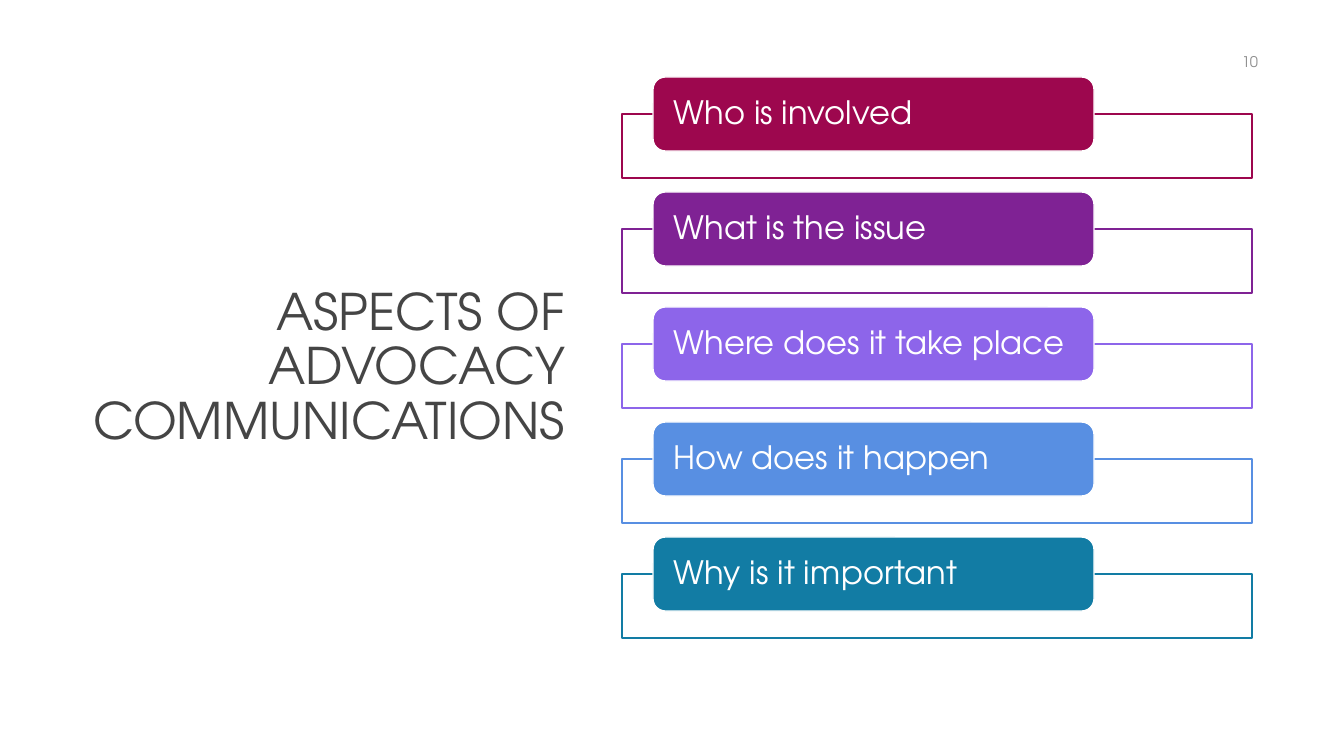
from pptx import Presentation
from pptx.dml.color import RGBColor
from pptx.enum.shapes import MSO_SHAPE
from pptx.enum.text import MSO_ANCHOR, PP_ALIGN
from pptx.util import Pt

PX = 914400 / 100.8
FONT = "TeX Gyre Adventor"
ROW_PITCH = 115
ASPECTS = [
    ("Who is involved", "9D074E"),
    ("What is the issue", "7F2294"),
    ("Where does it take place", "8D65EA"),
    ("How does it happen", "588FE2"),
    ("Why is it important", "127CA4"),
]


def px(*lengths):
    """Turn pixel lengths into a list of EMU."""
    return [round(length * PX) for length in lengths]


def write(shape, text, size, color, align, side_inset=10, line_spacing=1.0):
    frame = shape.text_frame
    frame.word_wrap = True
    frame.vertical_anchor = MSO_ANCHOR.MIDDLE
    frame.margin_left, frame.margin_right = px(side_inset, side_inset)
    frame.margin_top, frame.margin_bottom = px(0, 0)
    paragraph = frame.paragraphs[0]
    paragraph.alignment = align
    paragraph.line_spacing = line_spacing
    run = paragraph.add_run()
    run.text = text
    run.font.name = FONT
    run.font.size = Pt(size)
    run.font.color.rgb = RGBColor.from_string(color)


deck = Presentation()
deck.slide_width, deck.slide_height = px(1344, 756)
slide = deck.slides.add_slide(deck.slide_layouts[6])
shapes = slide.shapes

title = shapes.add_textbox(*px(58, 61, 517, 615))
write(title, "ASPECTS OF ADVOCACY COMMUNICATIONS", 36, "454545",
      PP_ALIGN.RIGHT, line_spacing=0.9)

for row, (question, color) in enumerate(ASPECTS):
    top = 77 + row * ROW_PITCH
    bracket = shapes.add_shape(MSO_SHAPE.RECTANGLE, *px(622, top + 37, 630, 64))
    label = shapes.add_shape(MSO_SHAPE.ROUNDED_RECTANGLE, *px(653, top, 441, 74))
    for part, fill, line in ((bracket, "FFFFFF", color), (label, color, "FFFFFF")):
        part.shadow.inherit = False
        part.fill.solid()
        part.fill.fore_color.rgb = RGBColor.from_string(fill)
        part.line.color.rgb = RGBColor.from_string(line)
        part.line.width = Pt(1)
    write(label, question, 23, "FFFFFF", PP_ALIGN.LEFT, side_inset=17, line_spacing=0.9)

page_number = shapes.add_textbox(*px(966, 42, 302, 40))
write(page_number, "10", 10.5, "8C8C8C", PP_ALIGN.RIGHT)

deck.save("out.pptx")
